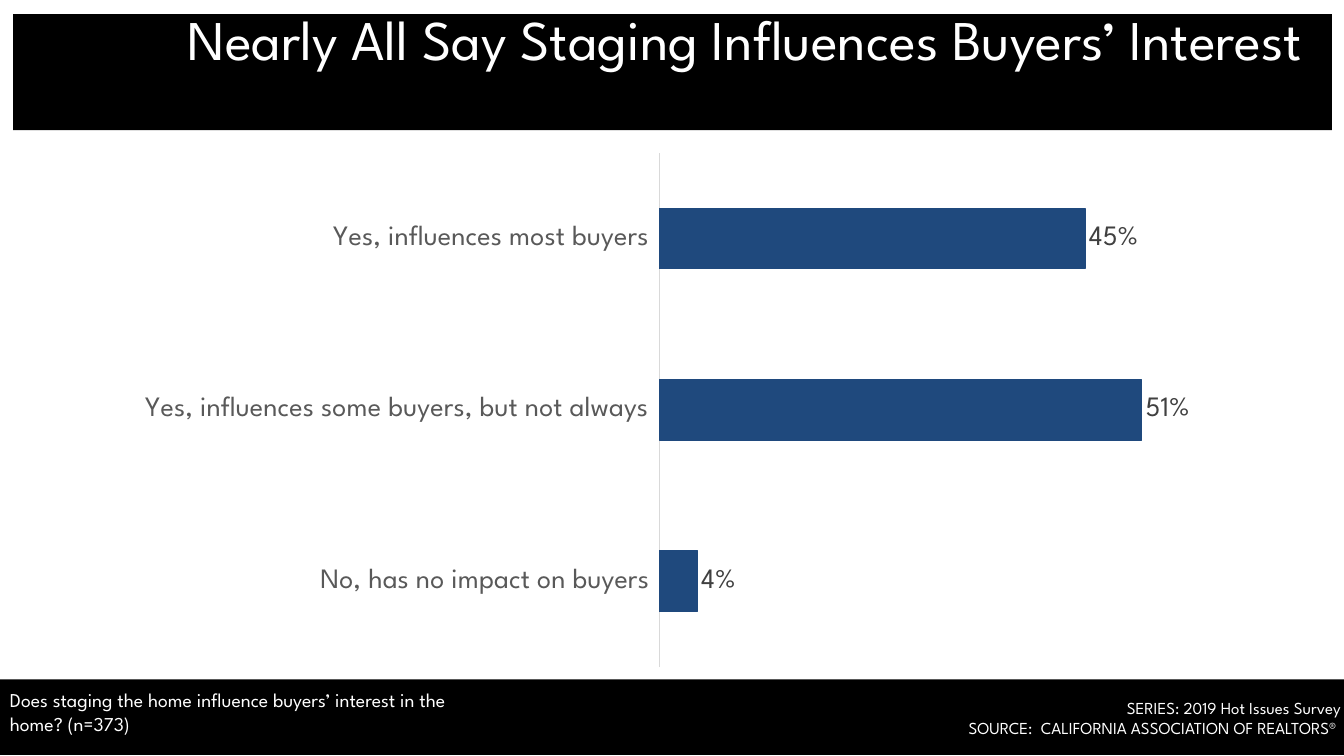
"""Build the slide on how home staging influences buyers' interest."""
from lxml.etree import SubElement
from pptx import Presentation
from pptx.chart.data import CategoryChartData
from pptx.dml.color import RGBColor
from pptx.enum.chart import XL_CHART_TYPE as ChartType, XL_LABEL_POSITION as LabelPos
from pptx.enum.chart import XL_TICK_LABEL_POSITION as TickLabels, XL_TICK_MARK as TickMark
from pptx.enum.shapes import MSO_SHAPE as Preset
from pptx.enum.text import MSO_ANCHOR as Anchor, MSO_AUTO_SIZE as AutoSize, PP_ALIGN as Align
from pptx.oxml.ns import qn
from pptx.util import Inches, Pt

HEADLINE = "Nearly All Say Staging Influences Buyers’ Interest"
QUESTION = ["Does staging the home influence buyers’ interest in the home? (n=373)"]
CREDITS = ["SERIES: 2019 Hot Issues Survey",
           "SOURCE:  CALIFORNIA ASSOCIATION OF REALTORS® "]
ANSWERS = {
    "Yes, influences most buyers": 0.45,
    "Yes, influences some buyers, but not always": 0.51,
    "No, has no impact on buyers": 0.04,
}
COLORS = {"band": "000000", "on_band": "FFFFFF", "bar": "1F497D",
          "category": "595959", "value": "404040", "axis": "D9D9D9"}
FONT = "League Spartan"
WIDTH, HEIGHT = 13.33, 7.5
BANDS = [(0, 6.74, WIDTH, 0.75), (0.13, 0.14, 13.08, 1.15)]
HEADLINE_AT = (1.7, 0.09, 11.37, 0.67)
QUESTION_AT = (0, 6.78, 4.78, 0.57)
CREDITS_AT = (8.96, 6.87, 4.44, 0.5)
CHART_AT = (1.28, 1.42, 11.1, 5.3)
PLOT_SHARE = {"x": 0.474, "y": 0.018, "w": 0.507, "h": 0.963}


def color(name):
    return RGBColor.from_string(COLORS[name])


def box(at):
    return [Inches(length) for length in at]


def style(font, size, name):
    for key, value in {"name": FONT, "size": Pt(size), "bold": False}.items():
        setattr(font, key, value)
    font.color.rgb = color(name)


def add_bands(slide):
    for depth, at in enumerate(BANDS, start=2):
        band = slide.shapes.add_shape(Preset.RECTANGLE, *box(at))
        band.shadow.inherit = False
        band.fill.solid()
        band.fill.fore_color.rgb = color("band")
        band.line.fill.background()
        slide.shapes._spTree.insert(depth, band._element)


def add_headline(slide):
    headline = slide.shapes.title
    for key, value in zip(("left", "top", "width", "height"), box(HEADLINE_AT)):
        setattr(headline, key, value)
    frame = headline.text_frame
    frame.text = HEADLINE
    frame.auto_size = AutoSize.NONE
    frame.vertical_anchor = Anchor.MIDDLE
    line = frame.paragraphs[0]
    line.alignment, line.line_spacing = Align.CENTER, 0.9
    style(line.runs[0].font, 40, "on_band")


def add_note(slide, lines, at, size, align, wrap):
    frame = slide.shapes.add_textbox(*box(at)).text_frame
    frame.text = "\n".join(lines)
    frame.word_wrap = wrap
    frame.auto_size = AutoSize.SHAPE_TO_FIT_TEXT
    for line in frame.paragraphs:
        line.alignment = align
        style(line.runs[0].font, size, "on_band")


def place_plot(chart):
    plot_area = chart._chartSpace.chart.plotArea
    layout = plot_area.find(qn("c:layout"))
    if layout is None:
        layout = SubElement(plot_area, qn("c:layout"))
        plot_area.insert(0, layout)
    manual = SubElement(layout, qn("c:manualLayout"))
    settings = {"layoutTarget": "inner", "xMode": "edge", "yMode": "edge", **PLOT_SHARE}
    for tag, value in settings.items():
        SubElement(manual, qn(f"c:{tag}")).set("val", str(value))


def add_answers(slide):
    data = CategoryChartData(number_format="0%")
    data.categories = list(ANSWERS)
    data.add_series("Series 1", list(ANSWERS.values()))
    chart = slide.shapes.add_chart(ChartType.BAR_CLUSTERED, *box(CHART_AT), data).chart
    chart.has_legend = chart.has_title = False
    style(chart.font, 12, "band")
    place_plot(chart)

    categories, values = chart.category_axis, chart.value_axis
    for key, value in {"reverse_order": True, "major_tick_mark": TickMark.NONE,
                       "minor_tick_mark": TickMark.NONE, "has_major_gridlines": False,
                       "tick_label_position": TickLabels.LOW}.items():
        setattr(categories, key, value)
    style(categories.tick_labels.font, 20, "category")
    categories.format.line.color.rgb = color("axis")
    categories.format.line.width = Pt(0.75)
    for key, value in {"visible": False, "has_major_gridlines": False,
                       "minimum_scale": 0, "maximum_scale": 0.6}.items():
        setattr(values, key, value)

    plot = chart.plots[0]
    plot.gap_width, plot.vary_by_categories = 182, False
    bars = plot.series[0]
    bars.format.fill.solid()
    bars.format.fill.fore_color.rgb = color("bar")
    bars.format.line.color.rgb = color("bar")
    bars.format.line.width = Pt(0.75)
    labels = bars.data_labels
    for key, value in {"show_value": True, "position": LabelPos.OUTSIDE_END,
                       "number_format": "0%", "number_format_is_linked": False}.items():
        setattr(labels, key, value)
    style(labels.font, 20, "value")


def main():
    deck = Presentation()
    deck.slide_width, deck.slide_height = Inches(WIDTH), Inches(HEIGHT)
    slide = deck.slides.add_slide(deck.slide_layouts[5])
    add_bands(slide)
    add_headline(slide)
    add_note(slide, CREDITS, CREDITS_AT, 12, Align.RIGHT, False)
    add_note(slide, QUESTION, QUESTION_AT, 14, Align.LEFT, True)
    add_answers(slide)
    deck.save("out.pptx")


if __name__ == "__main__":
    main()
